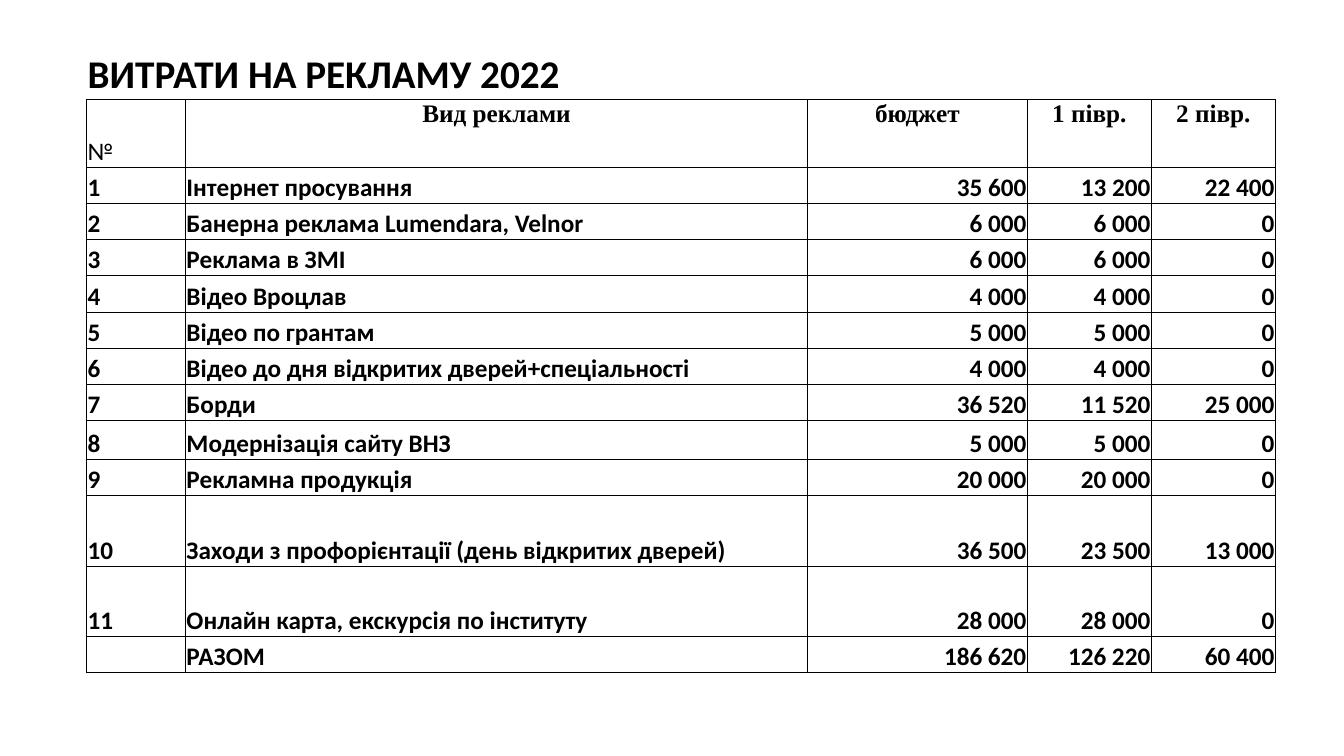
from lxml import etree
from pptx import Presentation
from pptx.dml.color import RGBColor
from pptx.enum.text import MSO_ANCHOR, PP_ALIGN
from pptx.oxml.ns import qn
from pptx.util import Inches, Pt

TOP, BOTTOM = MSO_ANCHOR.TOP, MSO_ANCHOR.BOTTOM
LEFT, CENTER, RIGHT = PP_ALIGN.LEFT, PP_ALIGN.CENTER, PP_ALIGN.RIGHT

TITLE = "ВИТРАТИ НА РЕКЛАМУ 2022"
HEADS = ["Вид реклами", "бюджет", "1 півр.", "2 півр."]
COSTS = [
    ("Інтернет просування", 13200, 22400),
    ("Банерна реклама Lumendara, Velnor", 6000, 0),
    ("Реклама в ЗМІ", 6000, 0),
    ("Відео Вроцлав", 4000, 0),
    ("Відео по грантам", 5000, 0),
    ("Відео до дня відкритих дверей+спеціальності", 4000, 0),
    ("Борди", 11520, 25000),
    ("Модернізація сайту ВНЗ", 5000, 0),
    ("Рекламна продукція", 20000, 0),
    ("Заходи з профорієнтації (день відкритих дверей)", 23500, 13000),
    ("Онлайн карта, екскурсія по інституту", 28000, 0),
]
WIDTHS = [0.98, 6.17, 2.18, 1.23, 1.23]
HEIGHTS = [0.47, 0.67] + [0.36] * 7 + [0.38, 0.36, 0.7, 0.7, 0.36]


def tint(code):
    return RGBColor.from_string(code)


def write(cell, text, font="Calibri", size=18, bold=True, align=LEFT, anchor=BOTTOM):
    cell.vertical_anchor = anchor
    para = cell.text_frame.paragraphs[0]
    para.alignment = align
    para.font.size = Pt(size)
    if text:
        run = para.add_run()
        run.text = text
        run.font.name = font
        run.font.size = Pt(size)
        run.font.bold = bold
        run.font.color.rgb = tint("000000")


def money(num):
    return f"{num:,}".replace(",", " ")


class Deck:
    ink = "000000"
    line = 0.5

    def __init__(self):
        self.prs = Presentation()
        self.prs.slide_width = Inches(13.33)
        self.prs.slide_height = Inches(7.5)
        self.slide = self.prs.slides.add_slide(self.prs.slide_layouts[6])

    def edge(self, cell, sides):
        props = cell._tc.get_or_add_tcPr()
        for side in "LRTB":
            line = etree.SubElement(props, qn(f"a:ln{side}"), w=str(Pt(self.line)))
            if side in sides:
                fill = etree.SubElement(line, qn("a:solidFill"))
                etree.SubElement(fill, qn("a:srgbClr"), val=self.ink)
            else:
                etree.SubElement(line, qn("a:noFill"))

    def table(self, left, top, widths, heights):
        frame = self.slide.shapes.add_table(
            len(heights), len(widths), Inches(left), Inches(top),
            Inches(sum(widths)), Inches(sum(heights)))
        grid = frame.table
        grid.first_row = grid.horz_banding = False
        for col, width in zip(grid.columns, widths):
            col.width = Inches(width)
        for num, (row, height) in enumerate(zip(grid.rows, heights)):
            row.height = Inches(height)
            for cell in row.cells:
                self.edge(cell, "LRTB" if num else "B")
                cell.fill.background()
                cell.margin_left = cell.margin_right = cell.margin_top = Inches(0.01)
                cell.margin_bottom = 0
        return grid


def main():
    deck = Deck()
    grid = deck.table(0.86, 0.5, WIDTHS, HEIGHTS)
    grid.cell(0, 0).merge(grid.cell(0, 1))
    write(grid.cell(0, 0), TITLE, size=28)
    for col in range(2, 5):
        write(grid.cell(0, col), "")

    write(grid.cell(1, 0), "№", bold=False)
    for col, head in enumerate(HEADS, 1):
        write(grid.cell(1, col), head, font="Times New Roman", align=CENTER, anchor=TOP)

    rows = [(str(num), *cost) for num, cost in enumerate(COSTS, 1)]
    rows.append(("", "РАЗОМ", sum(c[1] for c in COSTS), sum(c[2] for c in COSTS)))
    for row, (num, name, first, last) in enumerate(rows, 2):
        write(grid.cell(row, 0), num)
        write(grid.cell(row, 1), name)
        for col, cost in enumerate((first + last, first, last), 2):
            write(grid.cell(row, col), money(cost), align=RIGHT)

    deck.prs.save("out.pptx")


if __name__ == "__main__":
    main()
